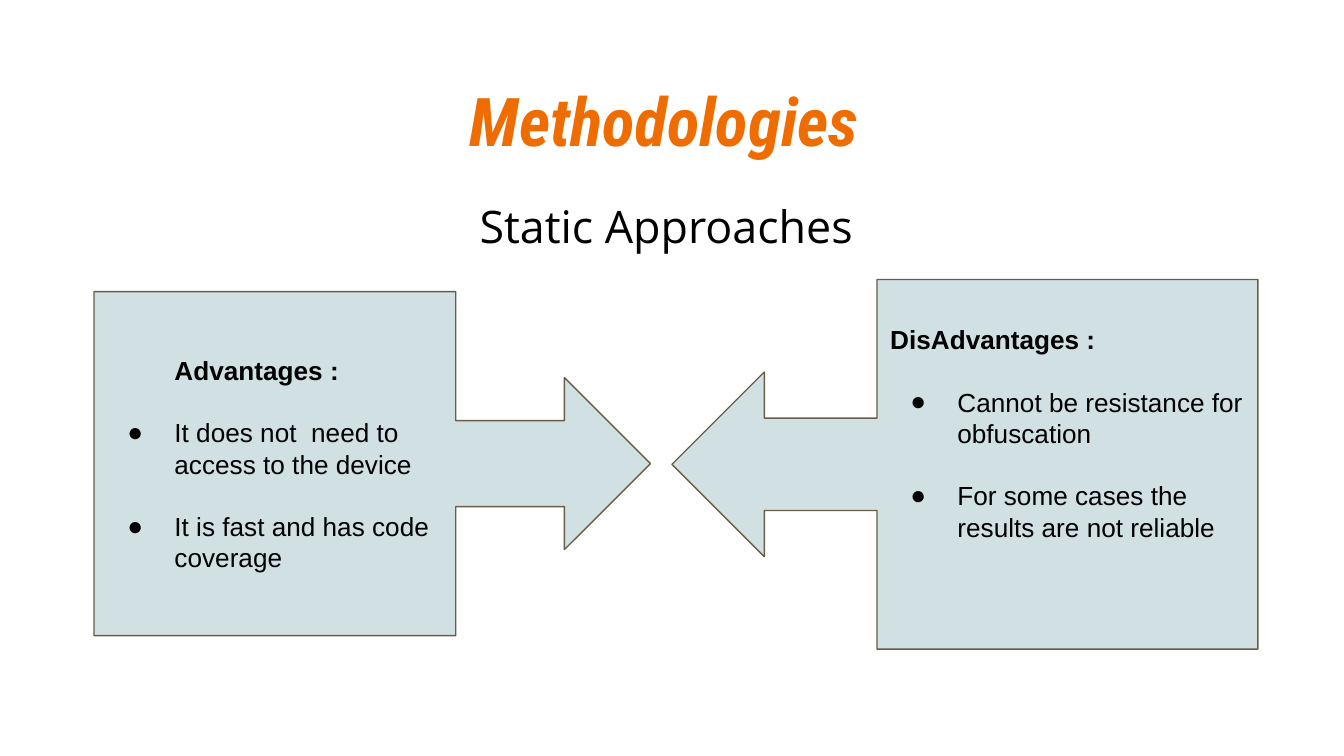
from dataclasses import dataclass

import lxml.etree
import pptx
import pptx.dml.color
import pptx.enum.shapes
import pptx.enum.text
import pptx.oxml.ns
import pptx.util
from pptx.util import Inches, Pt


@dataclass(frozen=True)
class Theme:
    accent: str = "EF6C00"
    ink: str = "000000"
    panel: str = "D0E0E3"
    outline: str = "695D46"
    title_font: str = "Roboto Condensed"
    subtitle_font: str = "Open Sans"
    body_font: str = "Arial"
    title_size: float = 36
    subtitle_size: float = 24
    body_size: float = 14
    body_line: float = 16.75
    inset: float = 0.1


THEME = Theme()


def rgb(value):
    return pptx.dml.color.RGBColor.from_string(value)


def place(shape, left, top, width, height):
    shape.left, shape.top = Inches(left), Inches(top)
    shape.width, shape.height = Inches(width), Inches(height)


def set_frame(frame, anchor, bottom=THEME.inset):
    frame.word_wrap = True
    frame.auto_size = pptx.enum.text.MSO_AUTO_SIZE.NONE
    frame.vertical_anchor = anchor
    frame.margin_left = frame.margin_right = frame.margin_top = Inches(THEME.inset)
    frame.margin_bottom = Inches(bottom)


def set_font(para, name, size, color, bold=False, italic=False):
    font = para.font
    font.name, font.size = name, Pt(size)
    font.bold, font.italic = bold, italic
    font.color.rgb = rgb(color)


def set_indent(para, left, first=0, bullet=None):
    props = para._p.get_or_add_pPr()
    props.set("marL", str(Inches(left)))
    props.set("indent", str(Inches(first)))
    if bullet:
        qn = pptx.oxml.ns.qn
        color = lxml.etree.SubElement(props, qn("a:buClr"))
        lxml.etree.SubElement(color, qn("a:srgbClr"), val=THEME.ink)
        lxml.etree.SubElement(props, qn("a:buSzPts"), val=str(THEME.body_size * 100))
        lxml.etree.SubElement(props, qn("a:buFont"), typeface=THEME.body_font)
        lxml.etree.SubElement(props, qn("a:buChar"), char=bullet)


def fill_heading(box, text, bounds, **font):
    place(box, *bounds)
    set_frame(box.text_frame, pptx.enum.text.MSO_ANCHOR.TOP)
    para = box.text_frame.paragraphs[0]
    para.text = text
    para.alignment = pptx.enum.text.PP_ALIGN.CENTER
    para.line_spacing = 1.0
    para.space_before = Pt(0)
    set_font(para, **font)


def add_callout(page, kind, bounds, heading, points, heading_indent=0, bottom=THEME.inset):
    """Add an arrow callout with a bold heading and bulleted points."""
    box = page.shapes.add_shape(kind, *map(Inches, bounds))
    for index, value in enumerate((0.25, 0.25, 0.25, 0.65)):
        box.adjustments[index] = value
    box.shadow.inherit = False
    box.fill.solid()
    box.fill.fore_color.rgb = rgb(THEME.panel)
    box.line.color.rgb = rgb(THEME.outline)
    box.line.width = Pt(0.75)

    frame = box.text_frame
    set_frame(frame, pptx.enum.text.MSO_ANCHOR.MIDDLE, bottom)
    for index, text in enumerate([heading, *points]):
        is_heading = index == 0
        para = frame.paragraphs[0] if is_heading else frame.add_paragraph()
        para.text = text
        if is_heading:
            set_indent(para, heading_indent)
        else:
            set_indent(para, 0.5, -0.35, "●")
            para.space_before = Pt(THEME.body_line)
        para.alignment = pptx.enum.text.PP_ALIGN.LEFT
        para.line_spacing = Pt(THEME.body_line)
        set_font(para, THEME.body_font, THEME.body_size, THEME.ink, bold=is_heading)


def main():
    deck = pptx.Presentation()
    deck.slide_width = Inches(10)
    deck.slide_height = deck.slide_width * 9 // 16
    page = deck.slides.add_slide(deck.slide_layouts[0])

    fill_heading(page.shapes.title, "Methodologies ", (0.34, 0.49, 9.32, 0.77),
                 name=THEME.title_font, size=THEME.title_size, color=THEME.accent,
                 bold=True, italic=True)
    fill_heading(page.placeholders[1], "Static Approaches ", (0.98, 1.38, 8.04, 0.94),
                 name=THEME.subtitle_font, size=THEME.subtitle_size, color=THEME.ink)

    shapes = pptx.enum.shapes.MSO_SHAPE
    add_callout(page, shapes.RIGHT_ARROW_CALLOUT, (0.7, 2.17, 4.14, 2.56),
                "Advantages :",
                ["It does not  need to access to the device",
                 "It is fast and has code coverage"],
                heading_indent=0.5)
    add_callout(page, shapes.LEFT_ARROW_CALLOUT, (5, 2.08, 4.36, 2.75),
                "DisAdvantages :",
                ["Cannot be resistance for obfuscation",
                 "For some cases the results are not reliable"],
                bottom=THEME.inset + 2 * THEME.body_line / 72)

    deck.save("out.pptx")


if __name__ == "__main__":
    main()
